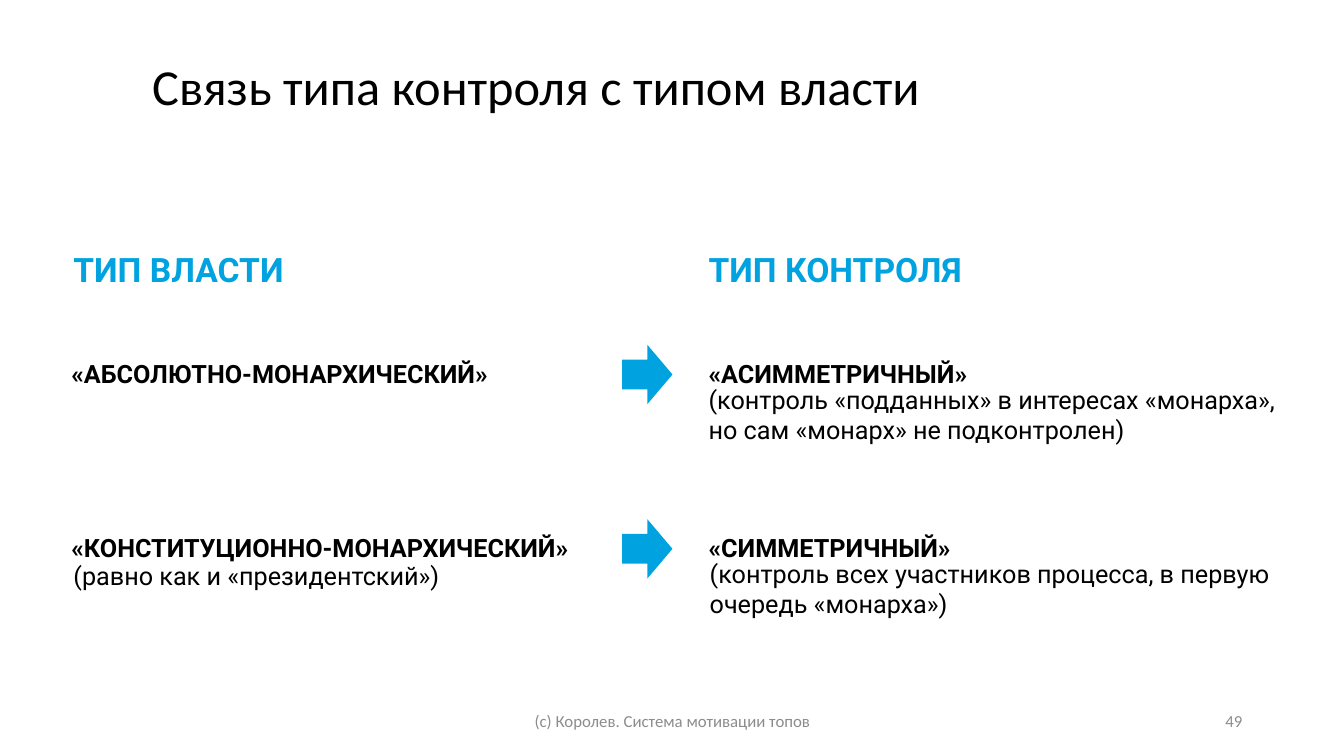
"""Build the slide that links types of power to types of control."""
import pptx
import pptx.util
import pptx.dml.color
import pptx.enum.shapes
import pptx.enum.text

Inches = pptx.util.Inches
ALIGN = pptx.enum.text.PP_ALIGN
ANCHOR = pptx.enum.text.MSO_ANCHOR
BLUE, BLACK, GREY = "00A3E0", "000000", "8C8C8C"


def paint(color, code):
    color.rgb = pptx.dml.color.RGBColor.from_string(code)


def write(shape, text, place, style, wrap=True, align=ALIGN.LEFT, anchor=ANCHOR.TOP):
    shape.left, shape.top, shape.width, shape.height = map(Inches, place)
    frame = shape.text_frame
    frame.auto_size = pptx.enum.text.MSO_AUTO_SIZE.NONE
    frame.word_wrap = wrap
    frame.vertical_anchor = anchor
    line = frame.paragraphs[0]
    line.text = text
    line.alignment = align
    size, name, bold, code = style
    font = line.runs[0].font
    looks = {"size": pptx.util.Pt(size), "name": name, "bold": bold}
    for key, value in looks.items():
        setattr(font, key, value)
    paint(font.color, code)
    return line


deck = pptx.Presentation()
deck.slide_width, deck.slide_height = Inches(13.33), Inches(7.5)
slide = deck.slides.add_slide(deck.slide_layouts[5])
shapes = slide.shapes

title = write(shapes.title, "Связь типа контроля с типом власти",
              (1.41, 0.65, 9.88, 0.57), (36, "Calibri", False, BLACK))
title.line_spacing = pptx.util.Pt(32)

head = (24, "Roboto", True, BLUE)
term = (18, "Roboto", True, BLACK)
note = (18, "Roboto", False, BLACK)
labels = [
    ("ТИП ВЛАСТИ", (0.63, 2.42, 2.31, 0.5), head, False),
    ("ТИП КОНТРОЛЯ", (6.93, 2.42, 2.76, 0.5), head, False),
    ("«АБСОЛЮТНО-МОНАРХИЧЕСКИЙ»", (0.61, 3.51, 4.39, 0.4), term, False),
    ("«АСИММЕТРИЧНЫЙ»", (6.93, 3.51, 2.86, 0.4), term, False),
    ("(контроль «подданных» в интересах «монарха», но сам «монарх» не подконтролен)",
     (6.93, 3.76, 6, 0.71), note, True),
    ("«КОНСТИТУЦИОННО-МОНАРХИЧЕСКИЙ»", (0.61, 5.23, 5.21, 0.4), term, False),
    ("(равно как и «президентский»)", (0.63, 5.51, 3.84, 0.4), note, False),
    ("«СИММЕТРИЧНЫЙ»", (6.93, 5.23, 2.69, 0.4), term, False),
    ("(контроль всех участников процесса, в первую очередь «монарха»)",
     (6.94, 5.49, 5.99, 0.71), note, True),
]
for text, place, style, wrap in labels:
    write(shapes.add_textbox(0, 0, 0, 0), text, place, style, wrap)

for top in (3.42, 5.15):
    arrow = shapes.add_shape(pptx.enum.shapes.MSO_SHAPE.RIGHT_ARROW,
                             Inches(6.17), Inches(top), Inches(0.5), Inches(0.59))
    arrow.shadow.inherit = False
    arrow.fill.solid()
    paint(arrow.fill.fore_color, BLUE)
    arrow.line.fill.background()

small = (12, "Calibri", False, GREY)
for text, left, width, align in (
        ("(с) Королев. Система мотивации топов", 4.42, 4.5, ALIGN.CENTER),
        ("49", 9.42, 3, ALIGN.RIGHT)):
    write(shapes.add_textbox(0, 0, 0, 0), text, (left, 6.95, width, 0.4), small,
          align=align, anchor=ANCHOR.MIDDLE)

deck.save("out.pptx")
